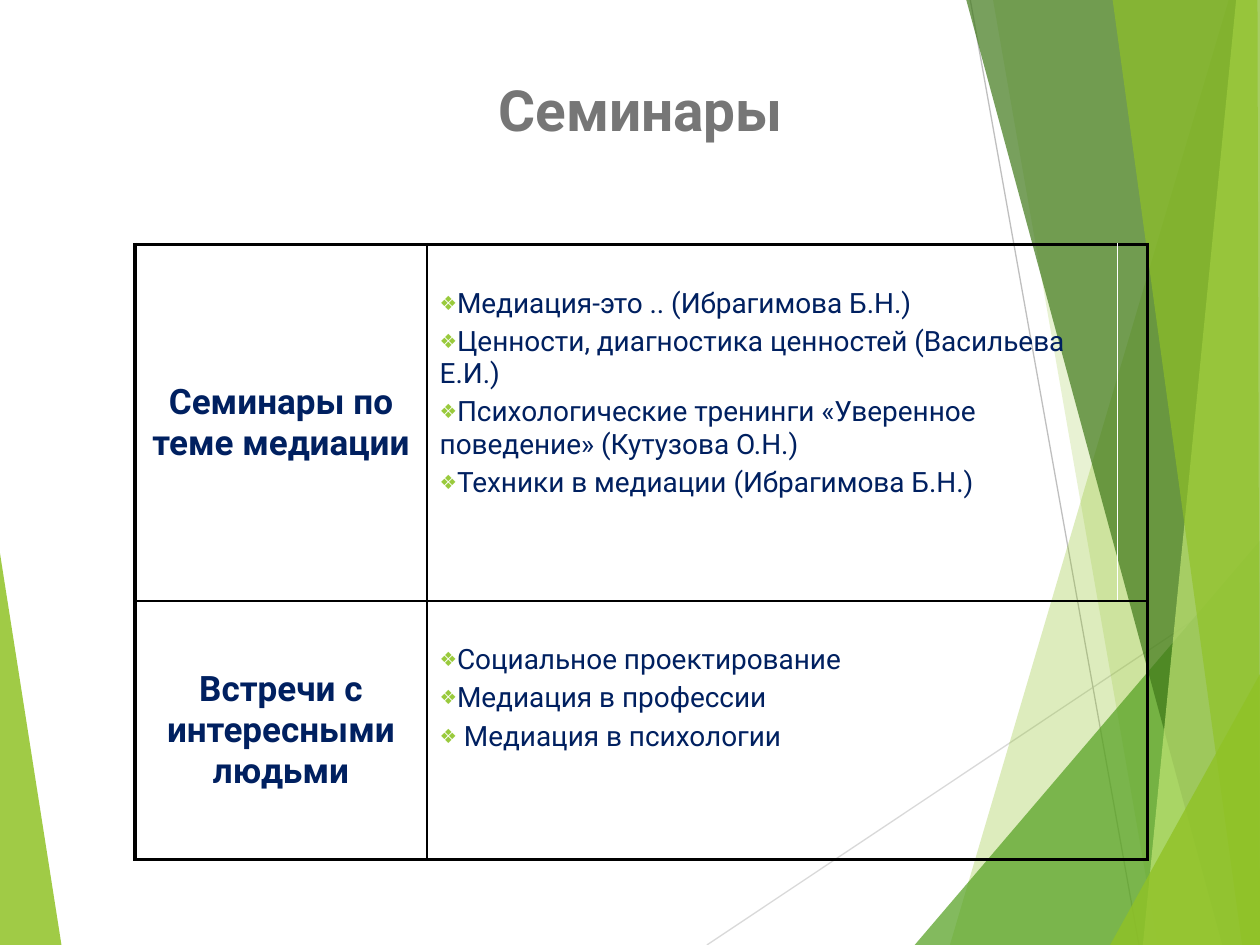
from lxml.etree import SubElement
from pptx import Presentation
from pptx.dml.color import RGBColor
from pptx.enum.text import MSO_ANCHOR, PP_ALIGN
from pptx.oxml import parse_xml
from pptx.oxml.ns import nsdecls, qn
from pptx.util import Cm, Pt

FONT = "Roboto"
W, H = 25.4, 19.05
FACETS = [
    ("90C226", 85, [(0, 11.15), (1.24, H), (0, H)]),
    ("90C226", 30, [(24.77, 0), (19.15, H), (W, H), (W, 0)]),
    ("90C226", 20, [(20.02, 0), (23.34, H), (W, H), (W, 0)]),
    ("54A021", 72, [(18.44, H), (W, 10.9), (W, H)]),
    ("3F7819", 70, [(19.48, 0), (24.64, H), (W, H), (W, 0)]),
    ("C0E474", 70, [(24.92, 0), (23.04, H), (W, H), (W, 0)]),
    ("90C226", 65, [(22.43, 0), (25.04, H), (W, H), (25.35, 0)]),
    ("90C226", 80, [(22.38, H), (W, 13.59), (W, H)]),
]
RAYS = [("D9D9D9", (14.25, H), (W, 11.61)), ("BFBFBF", (19.56, 0), (22.96, H))]
ROWS = [
    ("Семинары по теме медиации", [
        "Медиация-это .. (Ибрагимова Б.Н.)",
        "Ценности, диагностика ценностей (Васильева Е.И.)",
        "Психологические тренинги «Уверенное поведение» (Кутузова О.Н.)",
        "Техники в медиации (Ибрагимова Б.Н.)",
    ]),
    ("Встречи с интересными людьми", [
        "Социальное проектирование",
        "Медиация в профессии",
        " Медиация в психологии",
    ]),
]


def rgb(color):
    """Turn a hex string into a colour."""
    return RGBColor.from_string(color)


def style(p, size, color, bold=False):
    """Format all runs of a paragraph."""
    for r in p.runs:
        r.font.name, r.font.size, r.font.bold = FONT, Pt(size), bold
        r.font.color.rgb = rgb(color)


def add_facet(s, x, y, color, alpha, points):
    """Draw one translucent polygon."""
    pts = [(Cm(x + px), Cm(y + py)) for px, py in points]
    builder = s.shapes.build_freeform(*pts[0])
    builder.add_line_segments(pts[1:])
    sp = builder.convert_to_shape()
    sp.shadow.inherit = False
    sp.line.fill.background()
    sp.fill.solid()
    sp.fill.fore_color.rgb = rgb(color)
    clr = sp._element.spPr.find(qn("a:solidFill"))[0]
    SubElement(clr, qn("a:alpha"), val=str(alpha * 1000))


def add_ray(s, x, y, color, start, end):
    """Draw one thin straight line."""
    ends = [Cm(v) for v in (x + start[0], y + start[1], x + end[0], y + end[1])]
    line = s.shapes.add_connector(1, *ends)
    line.line.color.rgb = rgb(color)
    line.line.width = Pt(0.75)
    SubElement(line._element.spPr, qn("a:effectLst"))


def add_backdrop(s, x, y):
    """Draw the green facets and the thin rays."""
    add_facet(s, x, y, *FACETS[0])
    for ray in RAYS:
        add_ray(s, x, y, *ray)
    for facet in FACETS[1:]:
        add_facet(s, x, y, *facet)


def add_title(s, x, y, w, h, text):
    """Place the centred heading."""
    tf = s.shapes.add_textbox(Cm(x), Cm(y), Cm(w), Cm(h)).text_frame
    tf.word_wrap = True
    tf.vertical_anchor = MSO_ANCHOR.MIDDLE
    tf.text = text
    p = tf.paragraphs[0]
    p.alignment = PP_ALIGN.CENTER
    style(p, 32.4, "767676", True)


def set_borders(cell, **sides):
    """Set the cell borders from (colour, points) pairs for L, R, T and B."""
    tcPr = cell._tc.get_or_add_tcPr()
    for i, side in enumerate("LRTB"):
        color, width = sides[side]
        tcPr.insert(i, parse_xml(
            f'<a:ln{side} {nsdecls("a")} w="{Pt(width)}"><a:solidFill>'
            f'<a:srgbClr val="{color}"/></a:solidFill></a:ln{side}>'))


def fill_topic(cell, text):
    """Write the bold topic of a row."""
    cell.text = text
    cell.vertical_anchor = MSO_ANCHOR.MIDDLE
    p = cell.text_frame.paragraphs[0]
    p.alignment = PP_ALIGN.CENTER
    p.space_before = Pt(4)
    style(p, 20, "002060", True)


def fill_list(cell, items):
    """Write a list with diamond bullets."""
    cell.text = "\n".join(items)
    cell.margin_top = Cm(0.86)
    for i, p in enumerate(cell.text_frame.paragraphs):
        p.space_before = Pt(3.2 if i else 0)
        style(p, 16, "002060")
        pPr = p._p.get_or_add_pPr()
        SubElement(SubElement(pPr, qn("a:buClr")), qn("a:srgbClr"), val="99CA3C")
        SubElement(pPr, qn("a:buSzPct"), val="70000")
        SubElement(pPr, qn("a:buFont"), typeface=FONT)
        SubElement(pPr, qn("a:buChar"), char="❖")


def add_seminars(s, x, y, widths, heights):
    """Place the table of topics and seminars."""
    frame = s.shapes.add_table(len(heights), len(widths), Cm(x), Cm(y),
                               Cm(sum(widths)), Cm(sum(heights)))
    table = frame.table
    table.first_row = table.horz_banding = False
    for column, width in zip(table.columns, widths):
        column.width = Cm(width)
    for row, height in zip(table.rows, heights):
        row.height = Cm(height)
    thick, thin, white = ("000000", 2.25), ("000000", 1), ("FFFFFF", 1)
    last = len(heights) - 1
    for i, (topic, items) in enumerate(ROWS):
        inner = thin if i == last else white
        edges = [thick, thin, inner, thick]
        for j in range(len(widths)):
            cell = table.cell(i, j)
            right = thick if i == last and j else edges[j + 1]
            set_borders(cell, L=edges[j], R=right,
                        T=thin if i else thick, B=thick if i == last else thin)
            cell.fill.background()
        fill_topic(table.cell(i, 0), topic)
        fill_list(table.cell(i, 1), items)
    table.cell(last, 1).merge(table.cell(last, 2))


def main():
    """Build and save the slide."""
    prs = Presentation()
    prs.slide_width, prs.slide_height = Cm(W), Cm(H)
    s = prs.slides.add_slide(prs.slide_layouts[6])
    add_backdrop(s, 0, 0)
    add_title(s, 1.7, 1.32, 22.43, 1.75, "Семинары")
    add_seminars(s, 2.72, 4.93, [5.89, 13.92, 0.58], [7.19, 5.21])
    prs.save("out.pptx")


if __name__ == "__main__":
    main()
